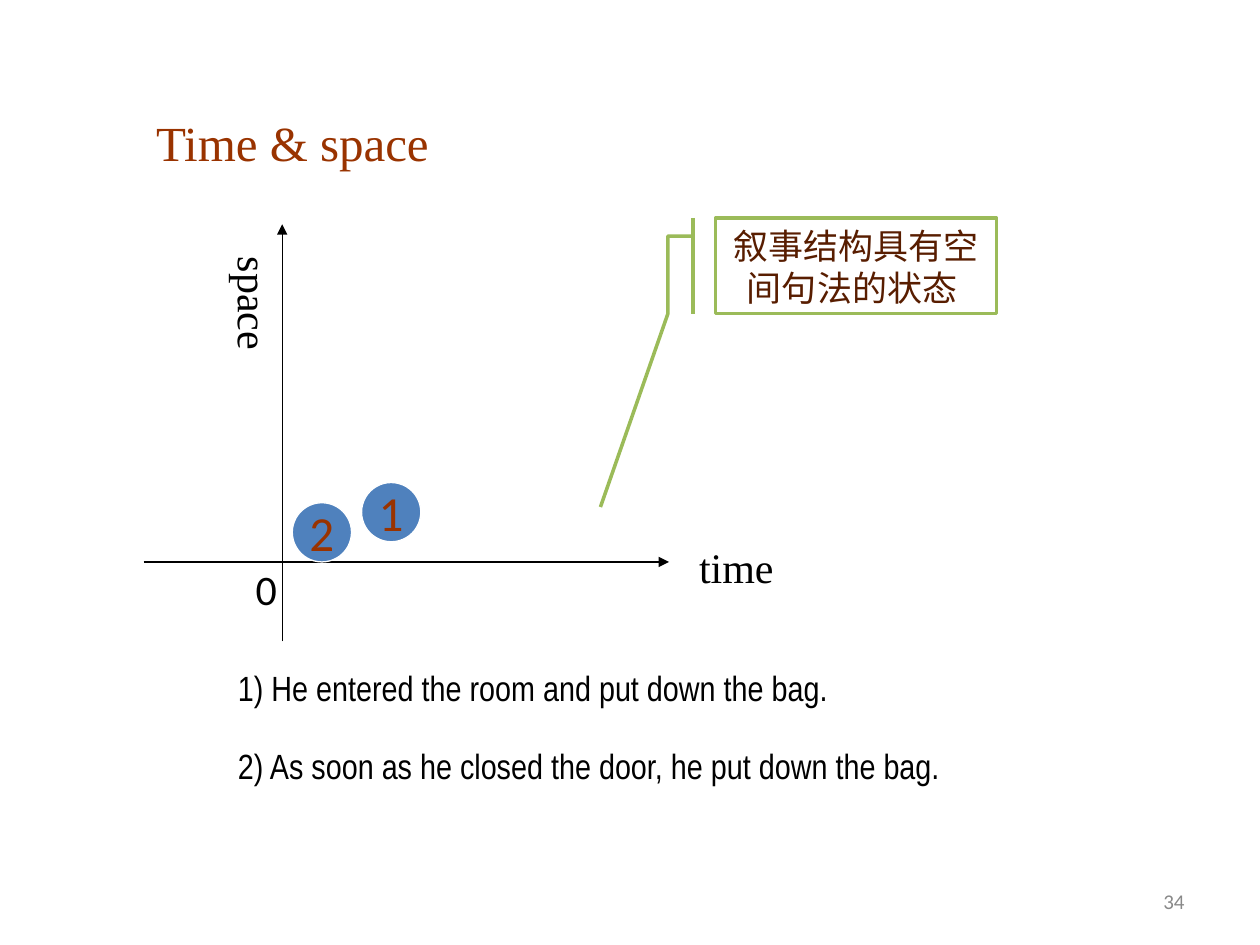
from dataclasses import dataclass

from lxml import etree
from pptx import Presentation
from pptx.dml.color import RGBColor
from pptx.enum.shapes import MSO_CONNECTOR as Link, MSO_SHAPE as Kind
from pptx.enum.text import MSO_ANCHOR as Anchor, MSO_AUTO_SIZE as Fit, PP_ALIGN as Align
from pptx.oxml.ns import qn
from pptx.util import Inches, Pt

BLACK = RGBColor(0x00, 0x00, 0x00)
WHITE = RGBColor(0xFF, 0xFF, 0xFF)
RUST = RGBColor(0x99, 0x33, 0x00)
BROWN = RGBColor(0x58, 0x1D, 0x00)
GRAY = RGBColor(0x89, 0x89, 0x89)
BLUE = RGBColor(0x4F, 0x81, 0xBD)
GREEN = RGBColor(0x9B, 0xBB, 0x59)

SERIF = "Times New Roman"
SANS = "Calibri"
NARROW = "Arial Narrow"
HAN = "Noto Sans CJK SC"


@dataclass
class Font:
    name: str
    size: int
    color: RGBColor = BLACK


@dataclass
class Label:
    text: str
    left: float
    top: float
    width: float
    height: float
    font: Font
    down: bool = False


@dataclass
class Axis:
    start: tuple[float, float]
    end: tuple[float, float]


@dataclass
class Event:
    text: str
    left: float
    top: float


def write(frame, text: str, font: Font, align: Align = Align.LEFT) -> None:
    para = frame.paragraphs[0]
    para.alignment = align
    run = para.add_run()
    run.text = text
    run.font.name = font.name
    run.font.size = Pt(font.size)
    run.font.color.rgb = font.color
    if font.name == HAN:
        east = etree.SubElement(run.font._element, qn("a:ea"))
        east.set("typeface", HAN)


def add_label(slide, item: Label) -> None:
    box = slide.shapes.add_textbox(
        Inches(item.left), Inches(item.top), Inches(item.width), Inches(item.height))
    frame = box.text_frame
    frame.word_wrap = False
    frame.auto_size = Fit.SHAPE_TO_FIT_TEXT
    if item.down:
        frame._txBody.bodyPr.set("vert", "eaVert")
    write(frame, item.text, item.font)


def add_axis(slide, item: Axis) -> None:
    ends = [Inches(n) for n in (*item.start, *item.end)]
    axis = slide.shapes.add_connector(Link.STRAIGHT, *ends)
    axis.line.color.rgb = BLACK
    axis.line.width = Pt(0.75)
    tip = etree.SubElement(axis.line._get_or_add_ln(), qn("a:tailEnd"))
    tip.set("type", "triangle")
    etree.SubElement(axis._element.spPr, qn("a:effectLst"))


def add_shape(slide, kind: Kind, place: tuple, fill: RGBColor,
              edge: RGBColor, weight: float):
    shape = slide.shapes.add_shape(kind, *[Inches(n) for n in place])
    shape.shadow.inherit = False
    shape.fill.solid()
    shape.fill.fore_color.rgb = fill
    shape.line.color.rgb = edge
    shape.line.width = Pt(weight)
    return shape


def add_event(slide, item: Event) -> None:
    dot = add_shape(slide, Kind.OVAL, (item.left, item.top, 0.47, 0.47),
                    BLUE, WHITE, 0.75)
    frame = dot.text_frame
    frame.word_wrap = False
    frame.vertical_anchor = Anchor.MIDDLE
    write(frame, item.text, Font(SANS, 28, RUST), Align.CENTER)


def add_note(slide) -> None:
    note = add_shape(slide, Kind.LINE_CALLOUT_3_BORDER_AND_ACCENT_BAR,
                     (5.68, 1.73, 2.23, 0.76), WHITE, GREEN, 2)
    bends = (0.19, -0.08, 0.19, -0.17, 1, -0.17, 3.02, -0.41)
    for spot, value in enumerate(bends):
        note.adjustments[spot] = value
    frame = note.text_frame
    frame.word_wrap = True
    frame.vertical_anchor = Anchor.TOP
    write(frame, "叙事结构具有空间句法的状态 ", Font(HAN, 20, BROWN), Align.CENTER)


def add_number(slide) -> None:
    box = slide.shapes.add_textbox(Inches(7.17), Inches(6.95), Inches(2.33), Inches(0.4))
    frame = box.text_frame
    frame.word_wrap = True
    frame.vertical_anchor = Anchor.MIDDLE
    write(frame, "34", Font(SANS, 12, GRAY), Align.RIGHT)


LABELS = [
    Label("Time & space", 1.14, 0.84, 5.28, 0.57, Font(SERIF, 28, RUST)),
    Label("time", 5.45, 4.25, 0.8, 0.51, Font(SERIF, 24)),
    Label("space", 1.66, 1.94, 0.61, 0.85, Font(SERIF, 24), down=True),
    Label("0", 1.93, 4.42, 0.37, 0.5, Font(SANS, 24)),
    Label("1) He entered the room and put down the bag.",
          1.79, 5.24, 4.91, 0.44, Font(NARROW, 20)),
    Label("2) As soon as he closed the door, he put down the bag.",
          1.79, 5.86, 5.81, 0.44, Font(NARROW, 20)),
]
AXES = [Axis((2.24, 5.09), (2.24, 1.78)), Axis((1.14, 4.46), (5.31, 4.46))]
EVENTS = [Event("1", 2.87, 3.83), Event("2", 2.32, 3.99)]


def main() -> None:
    deck = Presentation()
    deck.slide_width, deck.slide_height = Inches(10), Inches(7.5)
    slide = deck.slides.add_slide(deck.slide_layouts[6])

    # Page number
    add_number(slide)
    # Axes, then title, axis names and sentences
    for axis in AXES:
        add_axis(slide, axis)
    for label in LABELS:
        add_label(slide, label)
    # Events on the plane and the remark
    for event in EVENTS:
        add_event(slide, event)
    add_note(slide)

    deck.save("out.pptx")


if __name__ == "__main__":
    main()
